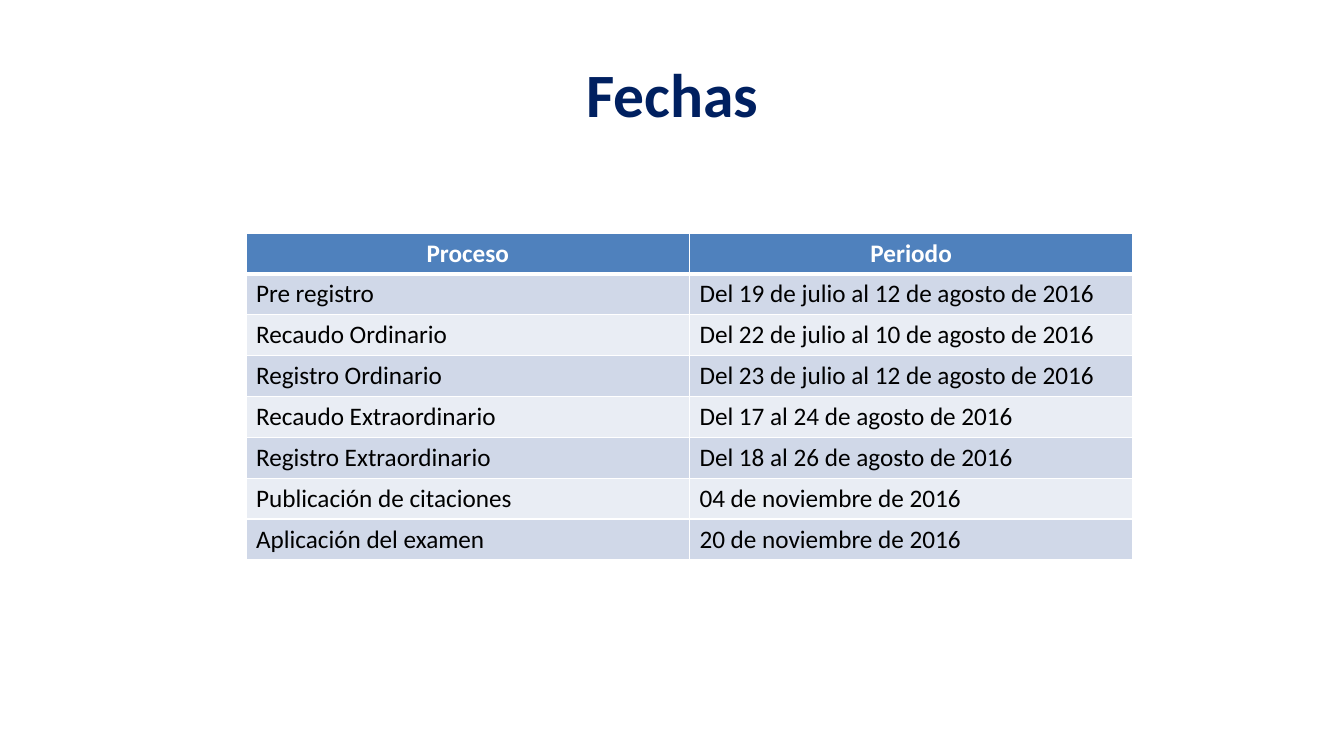
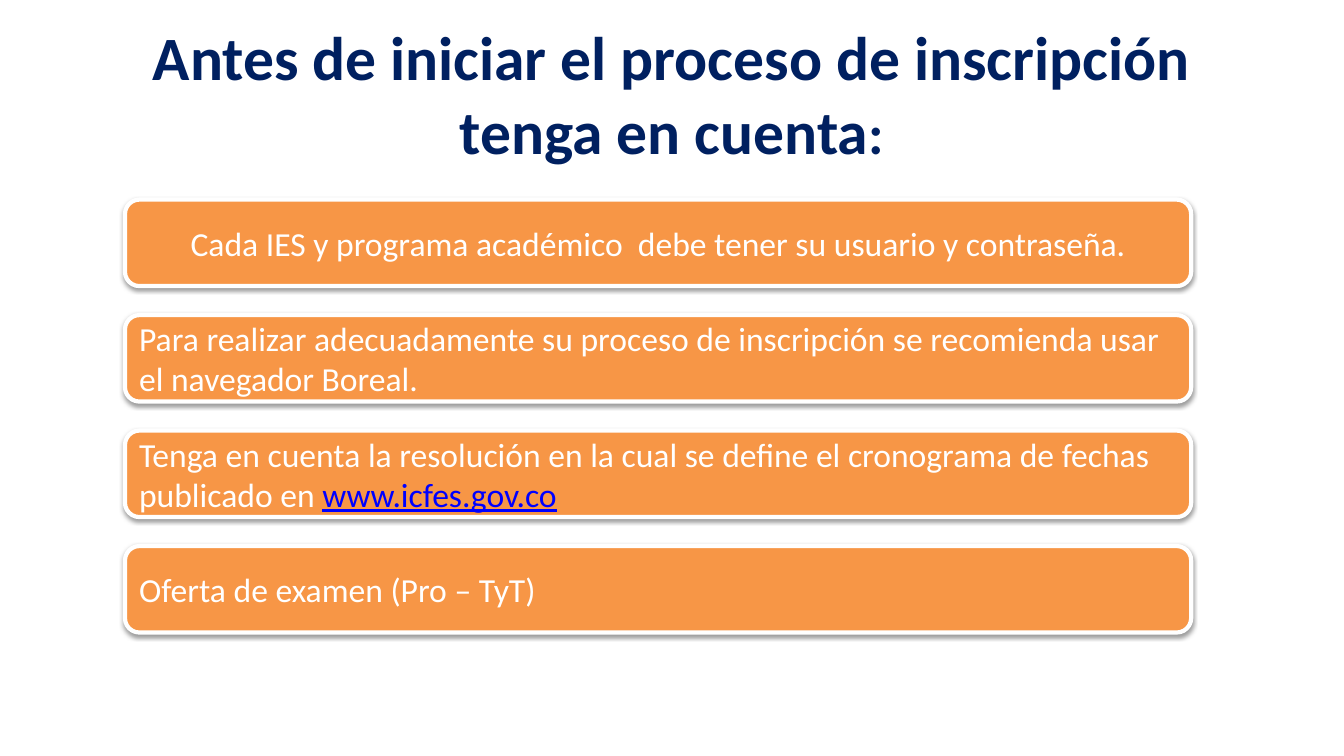
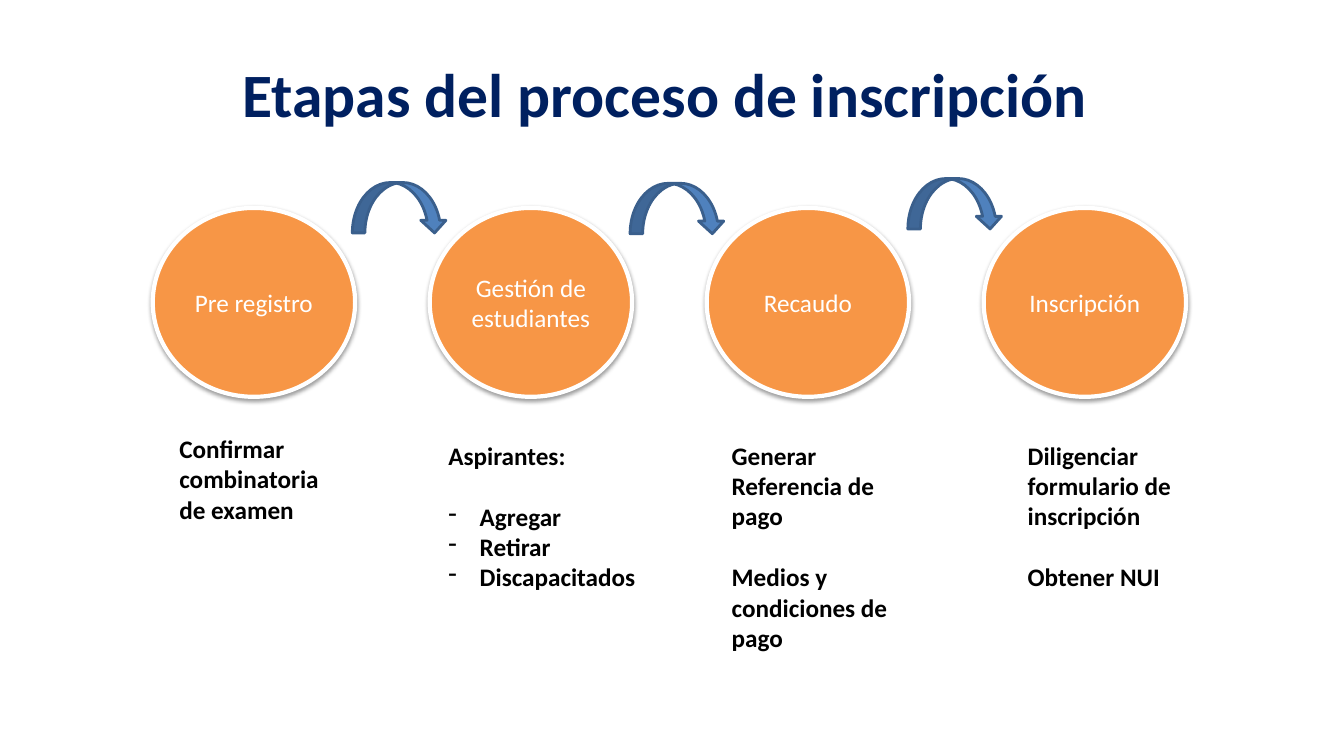
from dataclasses import dataclass

from lxml import etree
from pptx import Presentation
from pptx.dml.color import RGBColor
from pptx.enum.shapes import MSO_SHAPE
from pptx.enum.text import MSO_ANCHOR, MSO_AUTO_SIZE, PP_ALIGN
from pptx.oxml.ns import qn
from pptx.util import Cm, Pt

ROUNDED = MSO_SHAPE.ROUNDED_RECTANGLE
OVAL = MSO_SHAPE.OVAL
CURVED_ARROW = MSO_SHAPE.CURVED_DOWN_ARROW
LEFT = PP_ALIGN.LEFT
CENTER = PP_ALIGN.CENTER
MIDDLE = MSO_ANCHOR.MIDDLE
NO_FIT = MSO_AUTO_SIZE.NONE
GROW = MSO_AUTO_SIZE.SHAPE_TO_FIT_TEXT
TITLE_ONLY = 5


# Shared look
@dataclass(frozen=True)
class Theme:
    font: str = "Calibri"
    navy: RGBColor = RGBColor(0x00, 0x20, 0x60)
    orange: RGBColor = RGBColor(0xF7, 0x96, 0x46)
    blue: RGBColor = RGBColor(0x4F, 0x81, 0xBD)
    dark_blue: RGBColor = RGBColor(0x3A, 0x5F, 0x8C)
    band_dark: RGBColor = RGBColor(0xD0, 0xD8, 0xE8)
    band_light: RGBColor = RGBColor(0xE9, 0xED, 0xF4)
    link: RGBColor = RGBColor(0x00, 0x00, 0xFF)
    black: RGBColor = RGBColor(0x00, 0x00, 0x00)
    white: RGBColor = RGBColor(0xFF, 0xFF, 0xFF)
    title_size: float = 44
    colon_size: float = 40
    banner_size: float = 24
    body_size: float = 18
    paragraph_gap: float = 22


THEME = Theme()


@dataclass(frozen=True)
class Box:
    """Position and size in centimetres."""
    left: float
    top: float
    width: float
    height: float

    def lengths(self) -> tuple:
        return Cm(self.left), Cm(self.top), Cm(self.width), Cm(self.height)


@dataclass(frozen=True)
class Banner:
    text: str
    address: str = ""
    alignment: PP_ALIGN = LEFT


@dataclass(frozen=True)
class Stage:
    name: str
    caption: Box
    paragraphs: tuple
    bullets: tuple = ()


TITLE_BOX = Box(1.7, 0.76, 30.48, 3.18)

# Content
DATES = (
    ("Proceso", "Periodo"),
    ("Pre registro", "Del 19 de julio al 12 de agosto de 2016"),
    ("Recaudo Ordinario", "Del 22 de julio al 10 de agosto de 2016"),
    ("Registro Ordinario", "Del 23 de julio al 12 de agosto de 2016"),
    ("Recaudo Extraordinario", "Del 17 al 24 de agosto de 2016"),
    ("Registro Extraordinario", "Del 18 al 26 de agosto de 2016"),
    ("Publicación de citaciones", "04 de noviembre de 2016"),
    ("Aplicación del examen", "20 de noviembre de 2016"),
)

BANNERS = (
    Banner("Cada IES y programa académico  debe tener su usuario y contraseña.",
           alignment=CENTER),
    Banner("Para realizar adecuadamente su proceso de inscripción se recomienda "
           "usar el navegador Boreal."),
    Banner("Tenga en cuenta la resolución en la cual se define el cronograma de "
           "fechas publicado en ", address="www.icfes.gov.co"),
    Banner("Oferta de examen (Pro – TyT)"),
)

STAGES = (
    Stage("Pre registro", Box(4.27, 10.8, 4.7, 2.57),
          ("Confirmar combinatoria de examen",)),
    Stage("Gestión de estudiantes", Box(11.05, 10.97, 5.44, 4.1),
          ("Aspirantes:",), ("Agregar", "Retirar", "Discapacitados")),
    Stage("Recaudo", Box(18.19, 10.97, 4.7, 5.64),
          ("Generar Referencia de pago", "Medios y condiciones de pago")),
    Stage("Inscripción", Box(25.65, 10.97, 4.7, 4.1),
          ("Diligenciar formulario de inscripción", "Obtener NUI")),
)
ARROW_TOPS = (4.6, 4.62, 4.5)


# Drawing helpers
def format_run(run, size: float, color: RGBColor, bold: bool = False) -> None:
    run.font.name = THEME.font
    run.font.size = Pt(size)
    run.font.color.rgb = color
    run.font.bold = bold


def add_text(paragraph, text: str, size: float, color: RGBColor, bold: bool = False):
    run = paragraph.add_run()
    run.text = text
    format_run(run, size, color, bold)
    return run


def add_titled_slide(presentation, text: str, ending: str = ""):
    slide = presentation.slides.add_slide(presentation.slide_layouts[TITLE_ONLY])
    title = slide.shapes.title
    title.left, title.top, title.width, title.height = TITLE_BOX.lengths()
    frame = title.text_frame
    frame.auto_size = NO_FIT
    frame.vertical_anchor = MIDDLE
    paragraph = frame.paragraphs[0]
    paragraph.alignment = CENTER
    add_text(paragraph, text, THEME.title_size, THEME.navy, bold=True)
    if ending:
        add_text(paragraph, ending, THEME.colon_size, THEME.navy, bold=True)
    return slide


def add_shadow(shape) -> None:
    effects = shape._element.spPr.find(qn("a:effectLst"))
    shadow = etree.SubElement(effects, qn("a:outerShdw"), blurRad=str(Pt(3.1)),
                              dist=str(Pt(1.6)), dir="5400000", rotWithShape="0")
    color = etree.SubElement(shadow, qn("a:srgbClr"), val=str(THEME.black))
    etree.SubElement(color, qn("a:alpha"), val="38000")


def add_shape(slide, kind: MSO_SHAPE, box: Box, fill: RGBColor, line: RGBColor,
              line_width: float):
    shape = slide.shapes.add_shape(kind, *box.lengths())
    shape.shadow.inherit = False
    shape.fill.solid()
    shape.fill.fore_color.rgb = fill
    shape.line.color.rgb = line
    shape.line.width = Pt(line_width)
    return shape


def add_orange_shape(slide, kind: MSO_SHAPE, box: Box, text: str, size: float,
                     alignment: PP_ALIGN):
    """Draw an orange shape and return its paragraph."""
    shape = add_shape(slide, kind, box, THEME.orange, THEME.white, 3)
    add_shadow(shape)
    frame = shape.text_frame
    frame.word_wrap = True
    frame.vertical_anchor = MIDDLE
    paragraph = frame.paragraphs[0]
    paragraph.alignment = alignment
    add_text(paragraph, text, size, THEME.white)
    return paragraph


def set_borders(cell, widths: dict) -> None:
    properties = cell._tc.get_or_add_tcPr()
    for index, (side, width) in enumerate(widths.items()):
        line = etree.Element(qn(f"a:ln{side}"), w=str(Pt(width)))
        fill = etree.SubElement(line, qn("a:solidFill"))
        etree.SubElement(fill, qn("a:srgbClr"), val=str(THEME.white))
        properties.insert(index, line)


def add_dash(paragraph) -> None:
    properties = paragraph._p.get_or_add_pPr()
    indent = Cm(0.79)
    properties.set("marL", str(indent))
    properties.set("indent", str(-indent))
    etree.SubElement(properties, qn("a:buChar"), char="-")


def add_caption(slide, stage: Stage) -> None:
    frame = slide.shapes.add_textbox(*stage.caption.lengths()).text_frame
    frame.word_wrap = True
    frame.auto_size = GROW
    for index, text in enumerate(stage.paragraphs + stage.bullets):
        paragraph = frame.add_paragraph() if index else frame.paragraphs[0]
        if index >= len(stage.paragraphs):
            add_dash(paragraph)
        if 0 < index <= len(stage.paragraphs):
            paragraph.space_before = Pt(THEME.paragraph_gap)
        add_text(paragraph, text, THEME.body_size, THEME.black, bold=True)


# Slides
def build_dates(presentation) -> None:
    slide = add_titled_slide(presentation, "Fechas")
    box = Box(6.2, 5.87, 22.35, 8.23)
    table = slide.shapes.add_table(len(DATES), 2, *box.lengths()).table
    for row_index, texts in enumerate(DATES):
        header = row_index == 0
        band = THEME.band_dark if row_index % 2 else THEME.band_light
        for column_index, text in enumerate(texts):
            cell = table.cell(row_index, column_index)
            cell.fill.solid()
            cell.fill.fore_color.rgb = THEME.blue if header else band
            set_borders(cell, {"L": 1, "R": 1, "T": 3 if row_index == 1 else 1,
                               "B": 3 if header else 1})
            paragraph = cell.text_frame.paragraphs[0]
            paragraph.alignment = CENTER if header else LEFT
            add_text(paragraph, text, THEME.body_size,
                     THEME.white if header else THEME.black, bold=header)


def build_reminders(presentation) -> None:
    slide = add_titled_slide(
        presentation, "Antes de iniciar el proceso de inscripción tenga en cuenta", ":")
    for index, banner in enumerate(BANNERS):
        box = Box(3.15, 5.03 + 2.91 * index, 26.87, 2.18)
        paragraph = add_orange_shape(slide, ROUNDED, box, banner.text,
                                     THEME.banner_size, banner.alignment)
        if banner.address:
            run = add_text(paragraph, banner.address, THEME.banner_size, THEME.link)
            run.font.underline = True


def build_stages(presentation) -> None:
    slide = add_titled_slide(presentation, "Etapas del proceso de inscripción ")
    for index, stage in enumerate(STAGES):
        circle = Box(3.85 + 6.98 * index, 5.24, 5.1, 4.76)
        add_orange_shape(slide, OVAL, circle, stage.name, THEME.body_size, CENTER)
        add_caption(slide, stage)
    for index, top in enumerate(ARROW_TOPS):
        arrow = Box(8.88 + 7 * index, top, 2.39, 1.27)
        add_shape(slide, CURVED_ARROW, arrow, THEME.blue, THEME.dark_blue, 2)


def main() -> None:
    presentation = Presentation()
    presentation.slide_width = Cm(33.87)
    presentation.slide_height = Cm(19.05)
    build_dates(presentation)
    build_reminders(presentation)
    build_stages(presentation)
    presentation.save("out.pptx")


if __name__ == "__main__":
    main()
